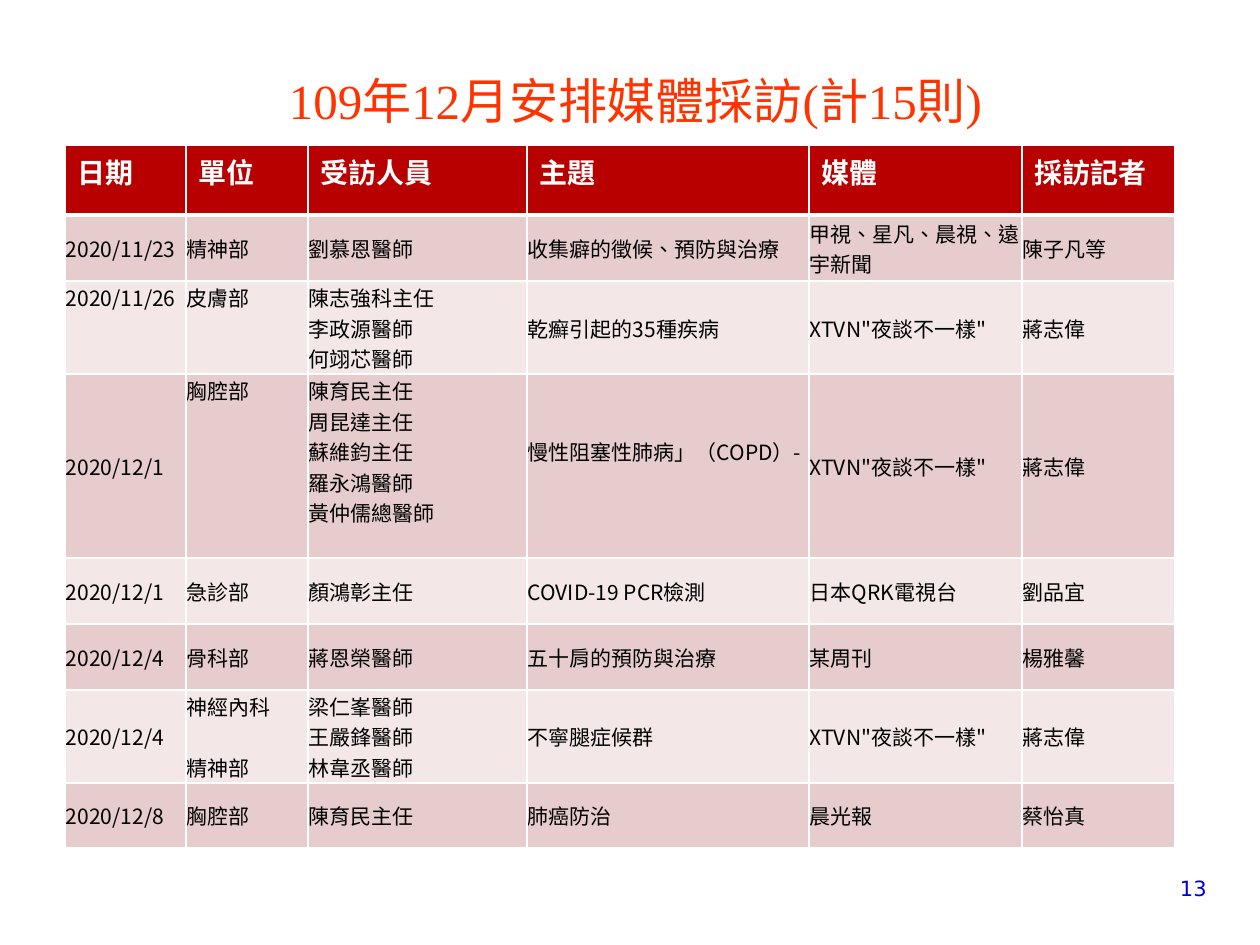
from dataclasses import dataclass

import lxml.etree
import pptx
import pptx.dml.color
import pptx.enum.lang
import pptx.enum.text
import pptx.oxml.ns
import pptx.util

ANCHOR = pptx.enum.text.MSO_ANCHOR
ALIGN = pptx.enum.text.PP_ALIGN


@dataclass(frozen=True)
class Theme:
    title_color: str = "FF3300"
    header_fill: str = "B90000"
    band_fills: tuple = ("E6CCCC", "F3E7E7")
    white: str = "FFFFFF"
    body_color: str = "000000"
    number_color: str = "0000CC"
    title_font: str = "Times New Roman"
    header_font: str = "Noto Sans CJK SC"
    body_font: str = "Noto Sans CJK TC"
    number_font: str = "DejaVu Sans"
    title_size: int = 28
    header_size: int = 16
    body_size: int = 12
    rule: int = 1
    header_rule: int = 3


HEADINGS = ["日期", "單位", "受訪人員", "主題", "媒體", "採訪記者"]
# "\v" breaks a line, "\n" starts a paragraph set apart by a gap.
INTERVIEWS = [
    ["2020/11/23", "精神部", "劉慕恩醫師", "收集癖的徵候、預防與治療",
     "甲視、星凡、晨視、遠宇新聞", "陳子凡等"],
    ["2020/11/26", "皮膚部", "陳志強科主任\v李政源醫師\v何翊芯醫師",
     "乾癬引起的35種疾病", "XTVN\"夜談不一樣\"", "蔣志偉"],
    ["2020/12/1", "胸腔部",
     "陳育民主任\v周昆達主任\v蘇維鈞主任\v羅永鴻醫師\v黃仲儒總醫師",
     "慢性阻塞性肺病」（COPD）-", "XTVN\"夜談不一樣\"", "蔣志偉"],
    ["2020/12/1", "急診部", "顏鴻彰主任", "COVID-19 PCR檢測",
     "日本QRK電視台", "劉品宜"],
    ["2020/12/4", "骨科部", "蔣恩榮醫師", "五十肩的預防與治療",
     "某周刊", "楊雅馨"],
    ["2020/12/4", "神經內科\n精神部", "梁仁峯醫師\v王嚴鋒醫師\v林韋丞醫師",
     "不寧腿症候群", "XTVN\"夜談不一樣\"", "蔣志偉"],
    ["2020/12/8", "胸腔部", "陳育民主任", "肺癌防治", "晨光報", "蔡怡真"],
]
COLUMN_WIDTHS = [121, 122, 219, 282, 213, 153]
ROW_HEIGHTS = [70, 66, 93, 184, 66, 66, 93, 65]
# Cells as (row, column), with the headings as row 0
TOP_ANCHORED = {(2, 0), (2, 1), (3, 1)}
SPACE_BELOW = {(3, 2), (3, 3)}
BODY_LINE = 30


def px(length):
    return pptx.util.Emu(round(length * 914400 / 126))


class SlideBuilder:
    def __init__(self, slide, theme):
        self.slide = slide
        self.theme = theme

    def style(self, paragraph, font, size, color, align=None, bold=False):
        paragraph.alignment = align
        paragraph.font.name = font
        paragraph.font.size = pptx.util.Pt(size)
        paragraph.font.bold = bold
        paragraph.font.color.rgb = pptx.dml.color.RGBColor.from_string(color)
        # Chinese characters take the East Asian typeface
        east_asian = self.theme.body_font if font == self.theme.title_font else font
        defaults = paragraph._p.pPr.find(pptx.oxml.ns.qn("a:defRPr"))
        lxml.etree.SubElement(defaults, pptx.oxml.ns.qn("a:ea"), typeface=east_asian)

    def title(self, text, left, top, width, height):
        title = self.slide.shapes.title
        title.left, title.top = px(left), px(top)
        title.width, title.height = px(width), px(height)
        frame = title.text_frame
        frame.text = text
        frame.auto_size = pptx.enum.text.MSO_AUTO_SIZE.NONE
        frame.vertical_anchor = ANCHOR.BOTTOM
        self.style(frame.paragraphs[0], self.theme.title_font,
                   self.theme.title_size, self.theme.title_color, ALIGN.CENTER)

    def page_number(self, text, left, top, width, height):
        number = self.slide.shapes.add_textbox(
            px(left), px(top), px(width), px(height))
        frame = number.text_frame
        frame.word_wrap = True
        frame.text = text
        self.style(frame.paragraphs[0], self.theme.number_font,
                   self.theme.body_size, self.theme.number_color, ALIGN.RIGHT)

    def borders(self, cell, top, bottom):
        properties = cell._tc.get_or_add_tcPr()
        widths = {"L": self.theme.rule, "R": self.theme.rule, "T": top, "B": bottom}
        for side, width in widths.items():
            line = lxml.etree.SubElement(
                properties, pptx.oxml.ns.qn(f"a:ln{side}"), w=str(pptx.util.Pt(width)))
            fill = lxml.etree.SubElement(line, pptx.oxml.ns.qn("a:solidFill"))
            lxml.etree.SubElement(
                fill, pptx.oxml.ns.qn("a:srgbClr"), val=self.theme.white)

    def fill(self, cell, color):
        cell.fill.solid()
        cell.fill.fore_color.rgb = pptx.dml.color.RGBColor.from_string(color)

    def header_cell(self, cell, text):
        self.borders(cell, self.theme.rule, self.theme.header_rule)
        self.fill(cell, self.theme.header_fill)
        cell.text_frame.text = text
        self.style(cell.text_frame.paragraphs[0], self.theme.header_font,
                   self.theme.header_size, self.theme.white, ALIGN.JUSTIFY, True)

    def body_cell(self, cell, text, row, column):
        top = self.theme.header_rule if row == 1 else self.theme.rule
        self.borders(cell, top, self.theme.rule)
        self.fill(cell, self.theme.band_fills[(row - 1) % 2])
        cell.margin_left = cell.margin_right = cell.margin_top = px(1)
        cell.margin_bottom = px(BODY_LINE if (row, column) in SPACE_BELOW else 0)
        cell.vertical_anchor = (
            ANCHOR.TOP if (row, column) in TOP_ANCHORED else ANCHOR.MIDDLE)
        cell.text_frame.text = text
        for index, paragraph in enumerate(cell.text_frame.paragraphs):
            if index:
                paragraph.space_before = pptx.util.Pt(17)
            self.style(paragraph, self.theme.body_font,
                       self.theme.body_size, self.theme.body_color)
            # Traditional Chinese centres its punctuation marks
            for run in paragraph.runs:
                run.font.language_id = (
                    pptx.enum.lang.MSO_LANGUAGE_ID.TRADITIONAL_CHINESE)

    def interview_table(self, left, top):
        table = self.slide.shapes.add_table(
            len(ROW_HEIGHTS), len(COLUMN_WIDTHS), px(left), px(top),
            px(sum(COLUMN_WIDTHS)), px(sum(ROW_HEIGHTS))).table
        for column, width in zip(table.columns, COLUMN_WIDTHS):
            column.width = px(width)
        for row, height in zip(table.rows, ROW_HEIGHTS):
            row.height = px(height)
        for column, heading in enumerate(HEADINGS):
            self.header_cell(table.cell(0, column), heading)
        for row, interview in enumerate(INTERVIEWS, start=1):
            for column, text in enumerate(interview):
                self.body_cell(table.cell(row, column), text, row, column)


def main():
    deck = pptx.Presentation()
    deck.slide_width, deck.slide_height = px(1260), px(945)
    title_only = deck.slide_layouts[5]
    builder = SlideBuilder(deck.slides.add_slide(title_only), Theme())
    builder.title("109年12月安排媒體採訪(計15則)", 84, 96, 1103, 40)
    builder.page_number("13", 1126, 869, 93, 38)
    builder.interview_table(65, 145)
    deck.save("out.pptx")


if __name__ == "__main__":
    main()
